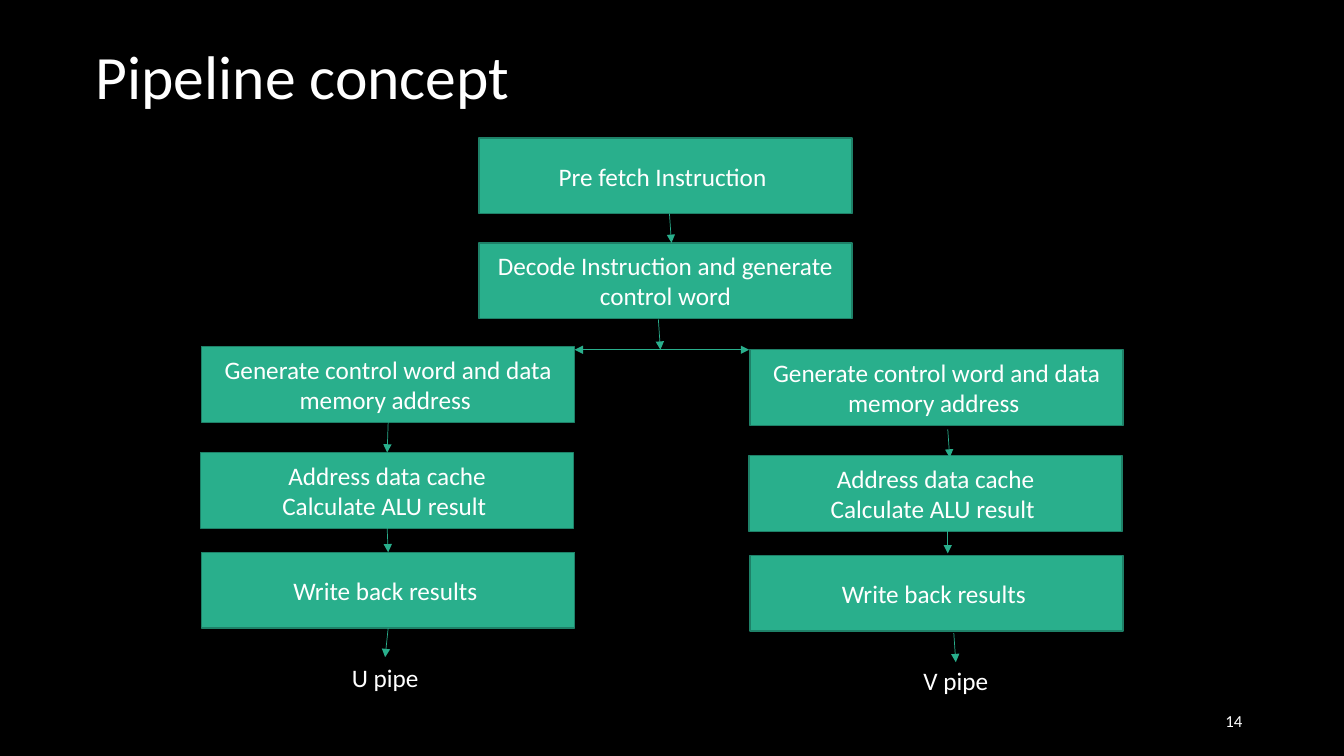
from lxml import etree
from pptx import Presentation
from pptx import util as u
from pptx.dml.color import RGBColor
from pptx.enum import shapes, text
from pptx.oxml.ns import qn

BLACK = RGBColor(0x00, 0x00, 0x00)
WHITE = RGBColor(0xFF, 0xFF, 0xFF)
GREEN = RGBColor(0x29, 0xAF, 0x8C)
DARK_GREEN = RGBColor(0x1E, 0x81, 0x68)

PX = 9144  # EMU per px, 100 px to the inch
BOX_W, BOX_H = 370, 75
TOP, BOTTOM = 0, 2
LEFT, CENTER, RIGHT = text.PP_ALIGN.LEFT, text.PP_ALIGN.CENTER, text.PP_ALIGN.RIGHT


class Deck:
    """Holds the style and the current slide."""

    def __init__(self, w, h, font="Calibri"):
        self.font = font
        self.prs = Presentation()
        self.prs.slide_width, self.prs.slide_height = w * PX, h * PX
        self.s = self.prs.slides.add_slide(self.prs.slide_layouts[6])
        fill = self.s.background.fill
        fill.solid()
        fill.fore_color.rgb = BLACK

    def set_text(self, sp, words, size, align, anchor, spacing=None):
        tf = sp.text_frame
        tf.word_wrap = True
        tf.vertical_anchor = anchor
        tf.text = words
        for p in tf.paragraphs:
            p.alignment = align
            p.line_spacing = spacing
            for r in p.runs:
                r.font.name = self.font
                r.font.size = u.Pt(size)
                r.font.color.rgb = WHITE

    def label(self, x, y, w, h, words, size=18, align=CENTER,
              anchor=text.MSO_ANCHOR.MIDDLE, spacing=None):
        sp = self.s.shapes.add_textbox(x * PX, y * PX, w * PX, h * PX)
        self.set_text(sp, words, size, align, anchor, spacing)
        return sp

    def box(self, x, y, words):
        sp = self.s.shapes.add_shape(shapes.MSO_SHAPE.FLOWCHART_PROCESS,
                                     x * PX, y * PX, BOX_W * PX, BOX_H * PX)
        sp.shadow.inherit = False
        sp.fill.solid()
        sp.fill.fore_color.rgb = GREEN
        sp.line.color.rgb = DARK_GREEN
        sp.line.width = u.Pt(1)
        self.set_text(sp, words, 18, CENTER, text.MSO_ANCHOR.MIDDLE)
        return sp

    def arrow(self, x1, y1, x2, y2, ends=("tailEnd",)):
        c = self.s.shapes.add_connector(shapes.MSO_CONNECTOR.STRAIGHT,
                                        x1 * PX, y1 * PX, x2 * PX, y2 * PX)
        c.line.color.rgb = GREEN
        c.line.width = u.Pt(0.5)
        spPr = c._element.spPr
        ln = spPr.find(qn("a:ln"))
        for end in ends:
            etree.SubElement(ln, qn("a:" + end), type="triangle")
        etree.SubElement(spPr, qn("a:effectLst"))
        return c

    def join(self, upper, lower):
        c = self.arrow(0, 0, 0, 0)
        c.begin_connect(upper, BOTTOM)
        c.end_connect(lower, TOP)


def main():
    d = Deck(1333, 750)

    # Title and slide number
    d.label(85, 6, 1150, 145, "Pipeline concept", 44, LEFT, spacing=0.9)
    d.label(942, 695, 300, 40, "14", 12, RIGHT)

    # Shared stages
    d.box(475, 137, "Pre fetch Instruction ")
    d.box(475, 241, "Decode Instruction and generate control word")

    # Two pipes with the same stages
    stages = [(0, 0, "Generate control word and data memory address "),
              (-1, 105, "Address data cache\nCalculate ALU result "),
              (0, 204, "Write back results ")]
    pipes = {}
    for name, x, y, label_x in (("U", 200, 344, 305), ("V", 744, 347, 871)):
        pipes[name] = [d.box(x + dx, y + dy, words) for dx, dy, words in stages]
        pipes[name].append(d.label(label_x, y + 308, 154, 40, name + " pipe",
                                   anchor=text.MSO_ANCHOR.TOP))

    # Arrows down the U pipe
    for upper, lower in zip(pipes["U"], pipes["U"][1:]):
        d.join(upper, lower)

    # Arrows beside the box centres: shared stages, then the V pipe
    for ends in ((664, 212, 666, 241), (653, 317, 655, 347),
                 (940, 426, 942, 454), (940, 524, 940, 549),
                 (946, 628, 948, 657)):
        d.arrow(*ends)

    # Split into the two pipes
    d.arrow(570, 347, 743, 347, ("headEnd", "tailEnd"))

    d.prs.save("out.pptx")


if __name__ == "__main__":
    main()
